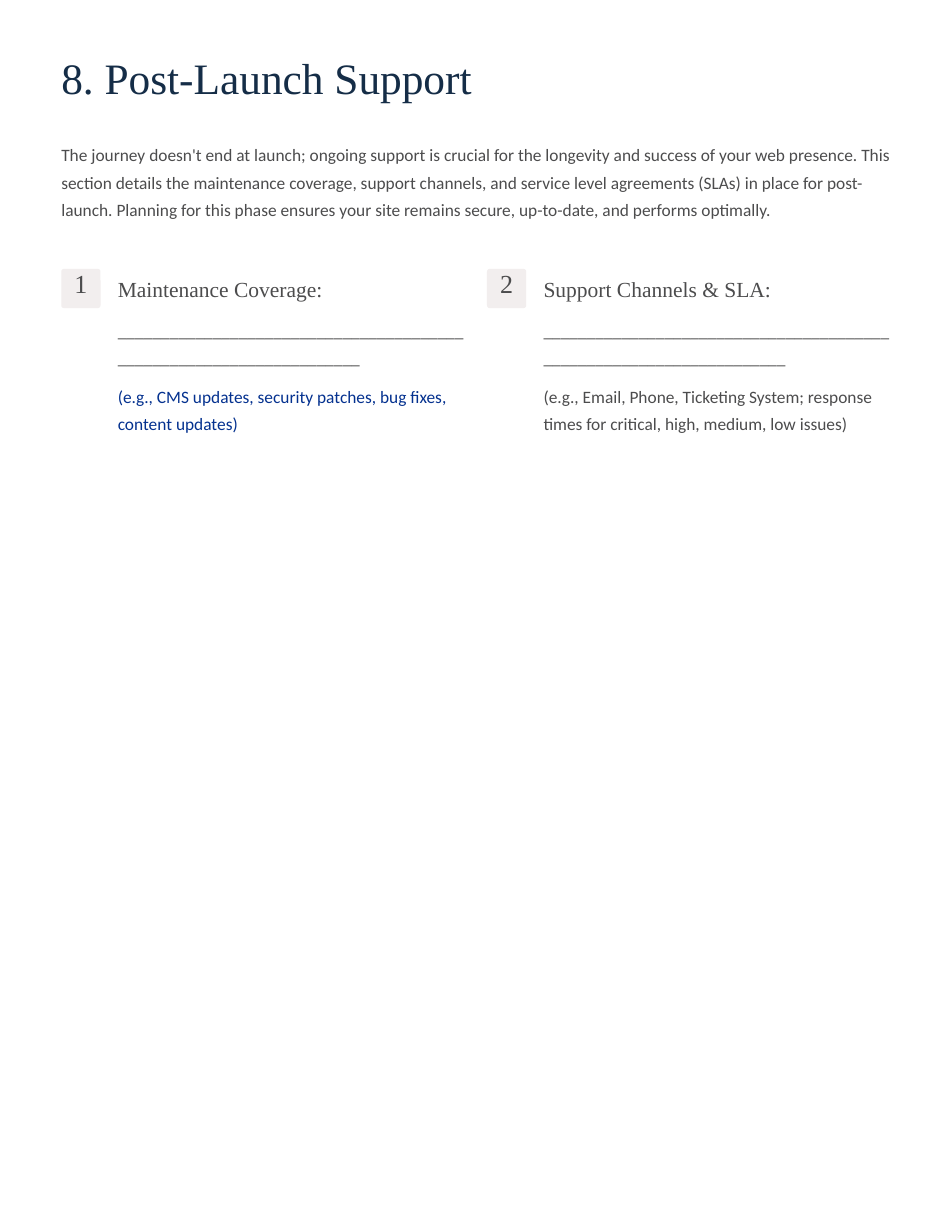
from dataclasses import dataclass

from pptx import Presentation
from pptx.dml.color import RGBColor
from pptx.enum.shapes import MSO_SHAPE
from pptx.enum.text import MSO_ANCHOR, MSO_AUTO_SIZE, PP_ALIGN
from pptx.util import Inches, Pt


@dataclass(frozen=True)
class Style:
    font: str
    size: float
    leading: float
    color: str
    align: PP_ALIGN = PP_ALIGN.LEFT


class Theme:
    serif, sans = "Times New Roman", "Calibri"
    page, badge = "FFFFFF", "F2EEEE"
    navy, gray, blue = "152D47", "4C4C4D", "04318F"
    title = Style(serif, 52.5, 66, navy)
    body = Style(sans, 21, 33.5, gray)
    accent = Style(sans, 21, 33.5, blue)
    number = Style(serif, 31.5, 31.5, gray, PP_ALIGN.CENTER)
    heading = Style(serif, 26, 33, gray)


LEFT = 1.03
COLUMN_STEP = 7.155
BLANK_LINE = "_" * 68
SECTIONS = [
    ("Maintenance Coverage:",
     "(e.g., CMS updates, security patches, bug fixes, content updates)",
     Theme.accent, 3.67, 0.94),
    ("Support Channels & SLA:",
     "(e.g., Email, Phone, Ticketing System; response times for critical, high, medium, low issues)",
     Theme.body, 3.82, 1.41),
]


def write(sp, text, style, wrap=True):
    tf = sp.text_frame
    tf.text = text
    tf.word_wrap = wrap
    tf.auto_size = MSO_AUTO_SIZE.NONE
    tf.vertical_anchor = MSO_ANCHOR.TOP
    tf.margin_left = tf.margin_right = tf.margin_top = tf.margin_bottom = 0
    p = tf.paragraphs[0]
    p.alignment = style.align
    p.line_spacing = Pt(style.leading)
    p.space_before = Pt(0)
    font = p.runs[0].font
    font.name = style.font
    font.size = Pt(style.size)
    font.color.rgb = RGBColor.from_string(style.color)


def add_title(s, text):
    sp = s.shapes.title
    sp.left, sp.top = Inches(LEFT), Inches(0.81)
    sp.width, sp.height = Inches(7.34), Inches(0.92)
    write(sp, text, Theme.title, wrap=False)


def add_text(s, x, y, w, h, text, style, wrap=True):
    sp = s.shapes.add_textbox(Inches(x), Inches(y), Inches(w), Inches(h))
    write(sp, text, style, wrap)


def add_badge(s, x, y, number):
    sp = s.shapes.add_shape(MSO_SHAPE.ROUNDED_RECTANGLE,
                            Inches(x), Inches(y), Inches(0.66), Inches(0.66))
    sp.adjustments[0] = 0.07
    sp.shadow.inherit = False
    sp.fill.solid()
    sp.fill.fore_color.rgb = RGBColor.from_string(Theme.badge)
    sp.line.fill.background()
    add_text(s, x + 0.11, y + 0.06, 0.44, 0.55, str(number), Theme.number, wrap=False)


def add_section(s, number, heading, hint, hint_style, heading_w, hint_h):
    x = LEFT + (number - 1) * COLUMN_STEP
    text_x = x + 0.95
    add_badge(s, x, 4.52, number)
    add_text(s, text_x, 4.62, heading_w, 0.46, heading, Theme.heading, wrap=False)
    add_text(s, text_x, 5.26, 5.84, 0.94, BLANK_LINE, Theme.body)
    add_text(s, text_x, 6.37, 5.84, hint_h, hint, hint_style)


def main():
    prs = Presentation()
    prs.slide_width, prs.slide_height = Inches(16), Inches(20.71)
    s = prs.slides.add_slide(prs.slide_layouts[5])
    s.background.fill.solid()
    s.background.fill.fore_color.rgb = RGBColor.from_string(Theme.page)

    add_title(s, "8. Post-Launch Support")
    add_text(s, LEFT, 2.31, 13.95, 1.88,
             "The journey doesn't end at launch; ongoing support is crucial for the "
             "longevity and success of your web presence. This section details the "
             "maintenance coverage, support channels, and service level agreements "
             "(SLAs) in place for post-launch. Planning for this phase ensures your "
             "site remains secure, up-to-date, and performs optimally.", Theme.body)
    for number, section in enumerate(SECTIONS, 1):
        add_section(s, number, *section)
    prs.save("out.pptx")


if __name__ == "__main__":
    main()
